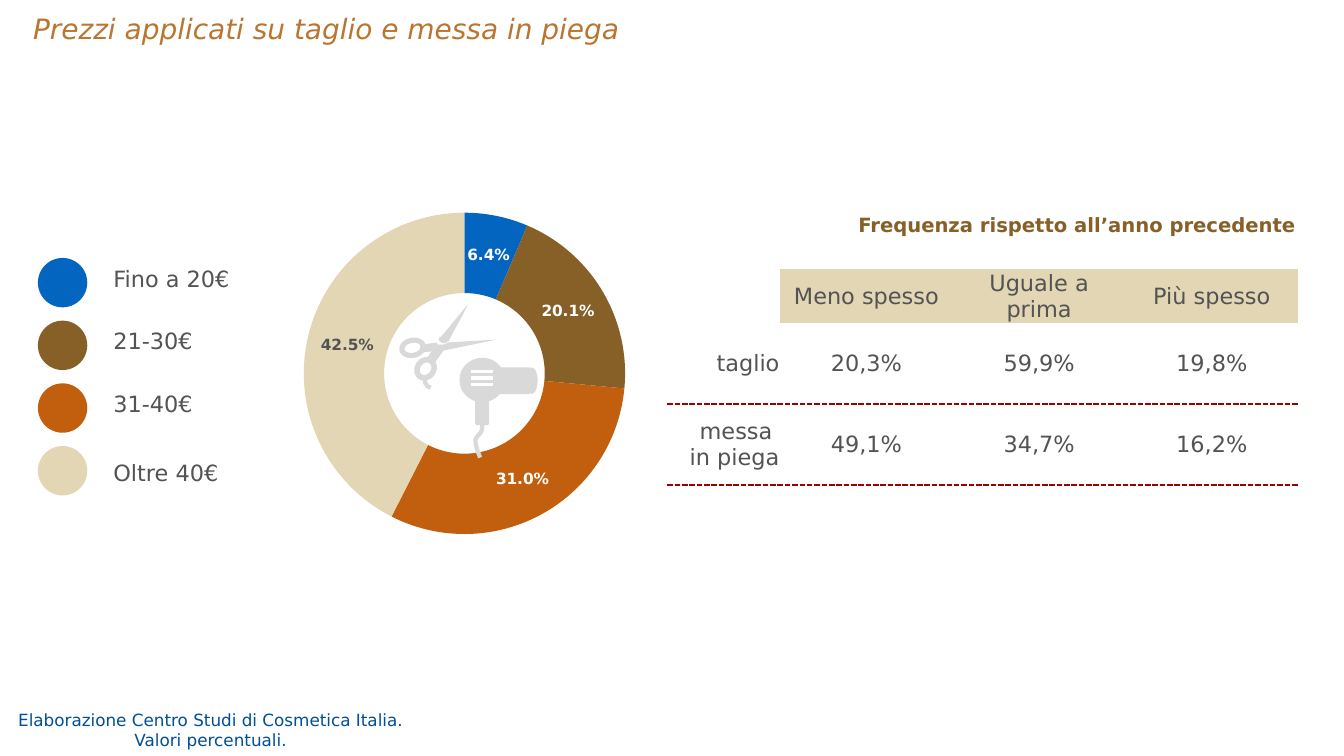
from collections import namedtuple

from lxml.etree import SubElement
from pptx import Presentation
from pptx.chart.data import CategoryChartData
from pptx.dml.color import RGBColor
from pptx.enum.chart import XL_CHART_TYPE as ChartType
from pptx.enum.shapes import MSO_CONNECTOR as Connector, MSO_SHAPE as Shape
from pptx.enum.text import MSO_ANCHOR as Anchor, MSO_AUTO_SIZE as AutoSize, PP_ALIGN as Align
from pptx.oxml import parse_xml
from pptx.oxml.ns import nsdecls, qn
from pptx.util import Cm, Pt

Box = namedtuple("Box", "left top width height")

FONT = "DejaVu Sans"
COLORS = {
    "blue": "0365C0", "brown": "876028", "orange": "C25F0E", "sand": "E2D6B5",
    "text": "535353", "title": "BA7530", "note": "014F95", "rule": "9E0000",
    "icon": "D9D9D9", "white": "FFFFFF",
}
PRICES = [
    ("Fino a 20€", 0.064, "blue"),
    ("21-30€", 0.201, "brown"),
    ("31-40€", 0.31, "orange"),
    ("Oltre 40€", 0.425, "sand"),
]
FREQUENCIES = [
    ["", "Meno spesso", "Uguale a prima", "Più spesso"],
    ["taglio", "20,3%", "59,9%", "19,8%"],
    ["messa \nin piega", "49,1%", "34,7%", "16,2%"],
]
NO_STYLE = "{2D5ABB26-0587-4C30-8999-92F81FD0307C}"


def rgb(name):
    return RGBColor.from_string(COLORS[name])


def lengths(*values):
    return [Cm(value) for value in values]


def style_font(font, size, color, bold=False, italic=False):
    font.name, font.size = FONT, Pt(size)
    font.bold, font.italic = bold, italic
    font.color.rgb = rgb(color)


def write(frame, text, size, color, align=Align.LEFT, spacing=1, **style):
    frame.text = text
    frame.word_wrap = True
    frame.vertical_anchor = Anchor.MIDDLE
    for para in frame.paragraphs:
        para.alignment, para.line_spacing = align, spacing
        for span in para.runs:
            style_font(span.font, size, color, **style)


def fill_text_box(shape, box, *content, **style):
    shape.left, shape.top, shape.width, shape.height = lengths(*box)
    frame = shape.text_frame
    frame.auto_size = AutoSize.NONE
    frame.margin_left = frame.margin_right = frame.margin_top = frame.margin_bottom = Cm(0.15)
    write(frame, *content, **style)


def add_text(page, box, *content, **style):
    fill_text_box(page.shapes.add_textbox(*lengths(*box)), box, *content, **style)


def add_solid(shapes, kind, box, color, rotation=0):
    shape = shapes.add_shape(kind, *lengths(*box))
    shape.shadow.inherit = False
    shape.fill.solid()
    shape.fill.fore_color.rgb = rgb(color)
    shape.line.fill.background()
    shape.rotation = rotation
    return shape


def draw_outline(shape, color, width):
    shape.line.color.rgb = rgb(color)
    shape.line.width = Pt(width)


def add_plain_table(page, box, widths, heights):
    table = page.shapes.add_table(len(heights), len(widths), *lengths(*box)).table
    table.first_row = table.horz_banding = False
    table._tbl.tblPr.find(qn("a:tableStyleId")).text = NO_STYLE
    for column, width in zip(table.columns, widths):
        column.width = Cm(width)
    for row, height in zip(table.rows, heights):
        row.height = Cm(height)
    for cell in table.iter_cells():
        cell.fill.background()
    return table


def add_dashed_border(cell, side):
    cell._tc.get_or_add_tcPr().insert(0, parse_xml(
        f'<a:{side} {nsdecls("a")} w="38100"><a:solidFill><a:srgbClr val="{COLORS["rule"]}"/>'
        f'</a:solidFill><a:prstDash val="sysDash"/></a:{side}>'))


def add_price_chart(page, box):
    data = CategoryChartData(number_format="0.0%")
    data.categories = [str(number) for number in range(1, len(PRICES) + 1)]
    data.add_series("Series 1", [share for _, share, _ in PRICES])
    chart = page.shapes.add_chart(ChartType.DOUGHNUT, *lengths(*box), data).chart
    chart.has_legend = chart.has_title = False
    style_font(chart.font, 24, "white", bold=True)

    plot = chart.plots[0]
    plot.vary_by_categories = True
    plot.has_data_labels = True
    labels = plot.data_labels
    labels.show_value, labels.show_percentage = True, False
    labels.number_format, labels.number_format_is_linked = "0.0%", False
    style_font(labels.font, 22, "white", bold=True)
    for index, (_, _, color) in enumerate(PRICES):
        point = plot.series[0].points[index]
        point.format.fill.solid()
        point.format.fill.fore_color.rgb = rgb(color)
        point.format.line.fill.background()
        label_color = "text" if color == "sand" else "white"
        style_font(point.data_label.font, 22, label_color, bold=True)

    area = chart._chartSpace.chart.plotArea
    for hole in area.iter(qn("c:holeSize")):
        hole.set("val", "65")
    for layout in area.findall(qn("c:layout")):
        area.remove(layout)
    layout = parse_xml(f'<c:layout {nsdecls("c")}/>')
    manual = SubElement(layout, qn("c:manualLayout"))
    for key, value in [("layoutTarget", "inner"), ("xMode", "edge"), ("yMode", "edge"),
                       ("x", 0.14), ("y", 0), ("w", 0.755), ("h", 0.956)]:
        SubElement(manual, qn(f"c:{key}")).set("val", str(value))
    area.insert(0, layout)


def add_legend(page, box):
    row, dot, indent = 3.15, 2.49, 3.55
    heights = [row] * 3 + [box.height - 3 * row]
    names = Box(box.left + indent, box.top, box.width - indent, box.height)
    table = add_plain_table(page, names, [names.width], heights)
    for index, (name, _, color) in enumerate(PRICES):
        write(table.cell(index, 0).text_frame, name, 32, "text")
        table.cell(index, 0).vertical_anchor = Anchor.MIDDLE
        top = box.top + 0.48 + index * 3.16
        add_solid(page.shapes, Shape.OVAL, Box(box.left, top, dot, dot), color)


def add_scissors(page, box):
    shapes = page.shapes.add_group_shape().shapes
    parts = [
        (Shape.ISOSCELES_TRIANGLE, 2.64, 0, 0.46, 2.29, 34, "icon"),
        (Shape.ISOSCELES_TRIANGLE, 3.3, 0.79, 0.41, 2.84, 82.5, "icon"),
        (Shape.RECTANGLE, 1.07, 2.21, 1.12, 0.41, 353.7, "icon"),
        (Shape.DONUT, 0, 1.93, 1.35, 1.02, 348.4, "icon"),
        (Shape.OVAL, 1.9, 2.08, 0.56, 0.2, 352.1, "white"),
        (Shape.OVAL, 1.98, 1.9, 0.46, 0.3, 23.2, "icon"),
        (Shape.RECTANGLE, 1.32, 2.57, 0.94, 0.46, 305.8, "icon"),
        (Shape.DONUT, 0.71, 2.95, 1.24, 1.09, 304.8, "icon"),
    ]
    for kind, left, top, width, height, rotation, color in parts:
        add_solid(shapes, kind, Box(box.left + left, box.top + top, width, height), color, rotation)
    finger_rest = add_solid(shapes, Shape.ARC, Box(box.left + 1.27, box.top + 3.51, 0.71, 0.94),
                            "icon", 184.5)
    finger_rest.fill.background()
    draw_outline(finger_rest, "icon", 6)


def bezier(start, first, second, end, steps=10):
    for step in range(1, steps + 1):
        t = step / steps
        weights = (1 - t) ** 3, 3 * t * (1 - t) ** 2, 3 * t * t * (1 - t), t ** 3
        yield tuple(sum(weight * point[axis] for weight, point
                        in zip(weights, (start, first, second, end))) for axis in (0, 1))


def add_dryer(page, box):
    shapes = page.shapes.add_group_shape().shapes
    for kind, left, top, width, height in [
        (Shape.OVAL, 3.33, 0.48, 0.61, 1.35),
        (Shape.RECTANGLE, 1.6, 0.48, 1.93, 1.35),
        (Shape.OVAL, 0, 0, 2.29, 2.24),
        (Shape.ROUNDED_RECTANGLE, 0.79, 1.55, 0.71, 1.85),
    ]:
        add_solid(shapes, kind, Box(box.left + left, box.top + top, width, height), "icon")
    for index in range(3):
        top = box.top + 0.69 + index * 0.33
        vent = shapes.add_connector(Connector.STRAIGHT,
                                    *lengths(box.left + 0.58, top, box.left + 1.68, top))
        SubElement(vent._element.spPr, qn("a:effectLst"))
        draw_outline(vent, "white", 4.5)

    knots = [(0.99, 1.83), (1.09, 2.49), (1.17, 3.15), (1.14, 3.53), (1.12, 3.91),
             (0.84, 3.89), (0.81, 4.14), (0.79, 4.37), (0.91, 4.7), (1.04, 5.03)]
    curve = [(Cm(box.left + x), Cm(box.top + y)) for start in (0, 3, 6)
             for x, y in bezier(*knots[start:start + 4])]
    builder = shapes.build_freeform(Cm(box.left + knots[0][0]), Cm(box.top + knots[0][1]))
    builder.add_line_segments(curve, close=False)
    cable = builder.convert_to_shape()
    cable.shadow.inherit = False
    cable.fill.background()
    draw_outline(cable, "icon", 6)


def add_frequency_table(page, box):
    first, header = 5.69, 2.72
    widths = [first] + [(box.width - first) / 3] * 3
    heights = [header] + [(box.height - header) / 2] * 2
    table = add_plain_table(page, box, widths, heights)
    for row, texts in enumerate(FREQUENCIES):
        for column, text in enumerate(texts):
            cell = table.cell(row, column)
            align = Align.CENTER if column else Align.RIGHT
            write(cell.text_frame, text, 32, "text", align)
            cell.vertical_anchor = Anchor.MIDDLE
            cell.margin_left = cell.margin_right = cell.margin_top = Cm(0.03)
            cell.margin_bottom = 0
            if row == 0 and column:
                cell.fill.solid()
                cell.fill.fore_color.rgb = rgb("sand")
            if row:
                add_dashed_border(cell, "lnB")
            if row == 2:
                add_dashed_border(cell, "lnT")


def main():
    deck = Presentation()
    deck.slide_width, deck.slide_height = lengths(67.74, 38.1)
    page = deck.slides.add_slide(deck.slide_layouts[5])
    fill_text_box(page.shapes.title, Box(1.52, 0.18, 64.62, 2.11),
                  "Prezzi applicati su taglio e messa in piega", 40, "title",
                  spacing=1.2, italic=True)
    add_price_chart(page, Box(11.58, 10.72, 22.86, 16.94))
    add_legend(page, Box(1.91, 12.52, 10.23, 13.28))
    add_scissors(page, Box(20.12, 15.09, 5, 4.5))
    add_dryer(page, Box(23.16, 18.03, 3.94, 5.03))
    add_text(page, Box(-0.08, 35.59, 21.39, 2.34),
             "Elaborazione Centro Studi di Cosmetica Italia.\nValori percentuali.",
             24, "note", Align.CENTER)
    add_frequency_table(page, Box(33.63, 13.56, 31.8, 10.9))
    add_text(page, Box(35.51, 10.15, 29.92, 2.11), "Frequenza rispetto all’anno precedente",
             28, "brown", Align.RIGHT, spacing=1.2, bold=True)
    deck.save("out.pptx")


if __name__ == "__main__":
    main()
